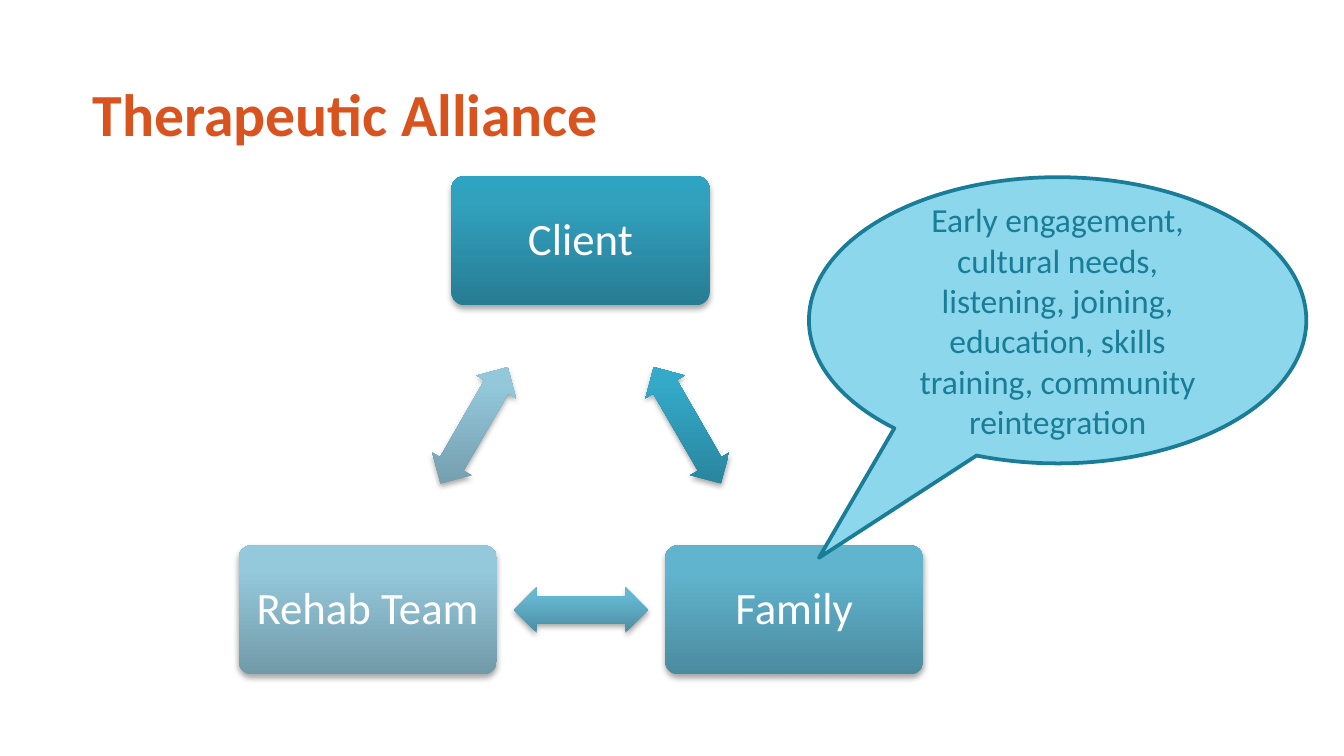
from lxml import etree
from pptx import Presentation
from pptx.dml.color import RGBColor
from pptx.enum.shapes import MSO_SHAPE
from pptx.enum.text import MSO_ANCHOR, PP_ALIGN
from pptx.oxml import parse_xml
from pptx.oxml.ns import nsdecls, qn
from pptx.util import Cm, Pt

ROUND_RECT = MSO_SHAPE.ROUNDED_RECTANGLE
ARROW = MSO_SHAPE.LEFT_RIGHT_ARROW
CALLOUT = MSO_SHAPE.OVAL_CALLOUT
MIDDLE = MSO_ANCHOR.MIDDLE
LEFT, CENTER = PP_ALIGN.LEFT, PP_ALIGN.CENTER


def write(sp, text, size, color, align, bold=False):
    tf = sp.text_frame
    tf.word_wrap = True
    tf.vertical_anchor = MIDDLE
    p = tf.paragraphs[0]
    p.text = text
    p.alignment = align
    font = p.runs[0].font
    font.name = "Calibri"
    font.size = Pt(size)
    font.bold = bold
    font.color.rgb = RGBColor.from_string(color)


def add_shaded(kind, cx, cy, w, h, colors):
    sp = s.shapes.add_shape(kind, Cm(cx - w / 2), Cm(cy - h / 2), Cm(w), Cm(h))
    sp.line.fill.background()
    sp.shadow.inherit = False
    stops = "".join(
        f'<a:gs pos="{pos}"><a:srgbClr val="{color}"/></a:gs>'
        for pos, color in zip((0, 80000, 100000), colors)
    )
    sp_pr = sp.fill._xPr
    sp_pr.find(qn("a:prstGeom")).addnext(parse_xml(
        f'<a:gradFill {nsdecls("a")} rotWithShape="0"><a:gsLst>{stops}</a:gsLst>'
        '<a:lin ang="16200000" scaled="0"/></a:gradFill>'
    ))
    shadow = etree.SubElement(
        sp_pr.find(qn("a:effectLst")), qn("a:outerShdw"),
        blurRad="40000", dist="23000", dir="5400000", rotWithShape="0",
    )
    black = etree.SubElement(shadow, qn("a:srgbClr"), val="000000")
    etree.SubElement(black, qn("a:alpha"), val="35000")
    return sp


prs = Presentation()
prs.slide_width, prs.slide_height = Cm(25.4), Cm(14.29)
s = prs.slides.add_slide(prs.slide_layouts[6])

title = s.shapes.add_textbox(Cm(1.5), Cm(1.14), Cm(18.8), Cm(1.96))
write(title, "Therapeutic Alliance", 32, "D9531E", LEFT, True)

members = [
    ("Client", 10.97, 4.55, ("267C93", "32A1BE", "2FA3C2"), ("28829A", "34A9C8", "32ABCC")),
    ("Family", 15.01, 11.53, ("4B8B9F", "61B4CE", "5FB6D1"), ("4D8DA1", "64B7D1", "63B9D4")),
    ("Rehab Team", 6.95, 11.53, ("729AA8", "94C8DB", "93C9DD"), ("719AA9", "93C8DB", "92C9DD")),
]
for i, (name, x, y, box_colors, arrow_colors) in enumerate(members):
    box = add_shaded(ROUND_RECT, x, y, 4.88, 2.44, box_colors)
    box.adjustments[0] = 0.1
    write(box, name, 24, "FFFFFF", CENTER)
    tf = box.text_frame
    tf.margin_left = tf.margin_right = Cm(0.2)
    tf.paragraphs[0].line_spacing = 0.9

    next_x, next_y = members[(i + 1) % 3][1:3]
    arrow = add_shaded(ARROW, (x + next_x) / 2, (y + next_y) / 2, 2.54, 0.86, arrow_colors)
    arrow.adjustments[0] = 0.6
    arrow.adjustments[1] = 0.5
    arrow.rotation = 60 + 120 * i

callout = s.shapes.add_shape(CALLOUT, Cm(15.29), Cm(3.35), Cm(9.4), Cm(5.41))
callout.adjustments[0] = -0.48
callout.adjustments[1] = 0.83
callout.shadow.inherit = False
callout.fill.solid()
callout.fill.fore_color.rgb = RGBColor.from_string("8CD7EC")
callout.line.color.rgb = RGBColor.from_string("197D97")
callout.line.width = Pt(2)
write(
    callout,
    "Early engagement, cultural needs, listening, joining, education, "
    "skills training, community reintegration",
    18, "197D97", CENTER,
)

prs.save("out.pptx")
